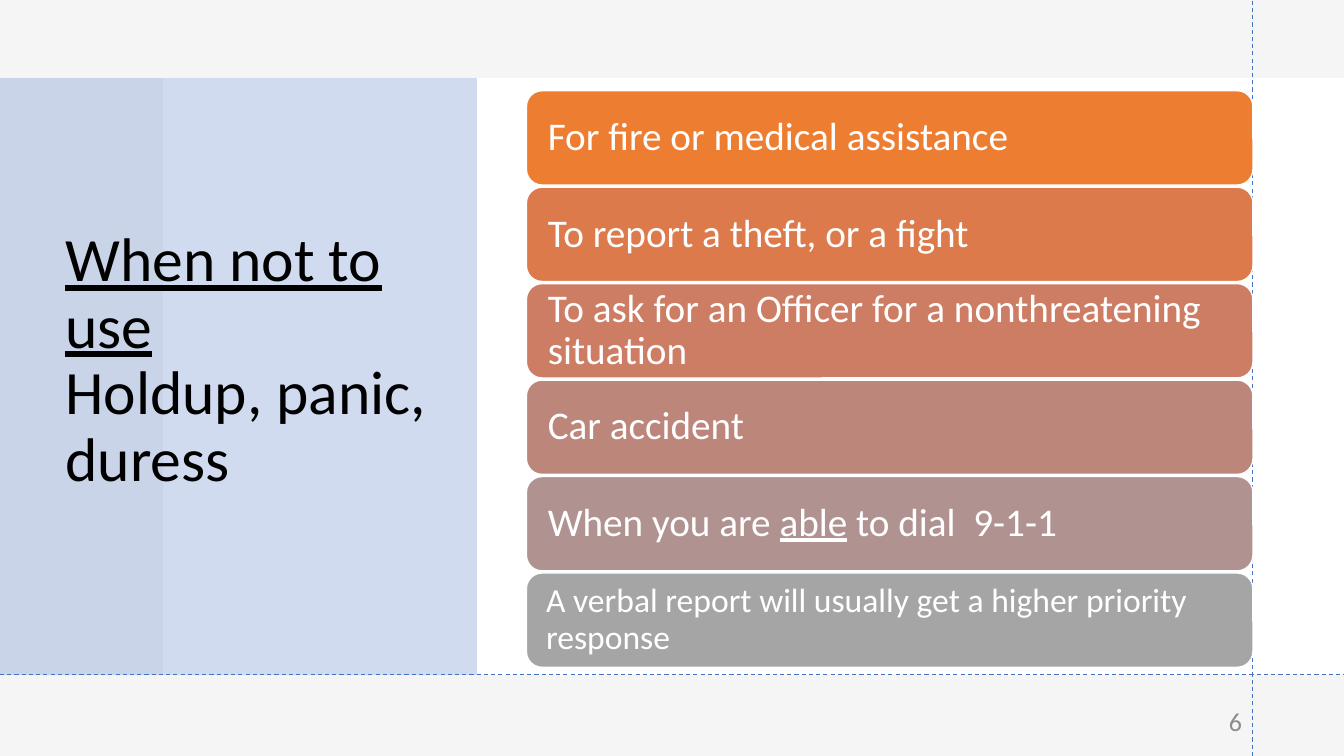
from lxml import etree
from pptx import Presentation
from pptx.dml.color import RGBColor
from pptx.enum.dml import MSO_LINE
from pptx.enum.shapes import MSO_CONNECTOR, MSO_SHAPE
from pptx.enum.text import MSO_ANCHOR, PP_ALIGN
from pptx.oxml.ns import qn
from pptx.util import Pt

WIDTH, HEIGHT = 960, 540
FONT = "Calibri"
WHITE, BLACK, BLUE, PALE, GREY = "FFFFFF", "000000", "4472C4", "F6F5F5", "8C8C8C"

TITLE = [("When not to use", True), ("Holdup, panic, duress", False)]
CARDS = [
    ("ED7D31", 28, 12, [("For fire or medical assistance", False)]),
    ("DC7A4B", 28, 12, [("To report a theft, or a fight", False)]),
    ("CC7D64", 28, 12, [("To ask for an Officer for a nonthreatening situation", False)]),
    ("BD867B", 28, 12, [("Car accident", False)]),
    ("B09391", 28, 12, [("When you are ", False), ("able", True), (" to dial  9-1-1", False)]),
    ("A5A5A5", 24, 10.8, [("A verbal report will usually get a higher priority response", False)]),
]
CARD_LEFT, CARD_TOP, CARD_WIDTH, CARD_HEIGHT, CARD_PITCH = 376, 64.8, 519, 67.4, 68.9
GUIDES = [(894.7, HEIGHT, 894.7, 0), (0, 481.7, WIDTH, 481.7)]


def colour(value):
    return RGBColor.from_string(value)


def add_block(kind, box, fill, opacity=None):
    shape = slide.shapes.add_shape(kind, *map(Pt, box))
    shape.shadow.inherit = False
    shape.fill.solid()
    shape.fill.fore_color.rgb = colour(fill)
    shape.line.fill.background()
    if opacity:
        solid = shape.fill.fore_color._xFill
        etree.SubElement(solid[0], qn("a:alpha"), val=str(opacity * 1000))
    return shape


def write(shape, runs, size, ink, align=PP_ALIGN.LEFT, spacing=0.9, breaks=False,
          side=7.2, edge=3.6):
    frame = shape.text_frame
    frame.word_wrap = True
    frame.vertical_anchor = MSO_ANCHOR.MIDDLE
    frame.margin_left = frame.margin_right = Pt(side)
    frame.margin_top = frame.margin_bottom = Pt(edge)
    paragraph = frame.paragraphs[0]
    paragraph.alignment = align
    paragraph.line_spacing = spacing
    for index, (text, underlined) in enumerate(runs):
        if breaks and index:
            paragraph.add_line_break()
        run = paragraph.add_run()
        run.text = text
        run.font.name = FONT
        run.font.size = Pt(size)
        run.font.color.rgb = colour(ink)
        if underlined:
            run.font.underline = True


presentation = Presentation()
presentation.slide_width, presentation.slide_height = Pt(WIDTH), Pt(HEIGHT)
slide = presentation.slides.add_slide(presentation.slide_layouts[6])
slide.background.fill.solid()
slide.background.fill.fore_color.rgb = colour(PALE)

add_block(MSO_SHAPE.RECTANGLE, (116.6, 55.8, WIDTH - 116.6, 426.2), WHITE)
add_block(MSO_SHAPE.RECTANGLE, (0, 55.8, 340.6, 426.2), BLUE, 25)

title = slide.shapes.add_textbox(*map(Pt, (39.6, 53.3, 284.4, 409.7)))
write(title, TITLE, 44, BLACK, breaks=True)

for guide in GUIDES:
    connector = slide.shapes.add_connector(MSO_CONNECTOR.STRAIGHT, *map(Pt, guide))
    connector.line.color.rgb = colour(BLUE)
    connector.line.width = Pt(0.75)
    connector.line.dash_style = MSO_LINE.DASH
    etree.SubElement(connector._element.spPr, qn("a:effectLst"))

for row, (fill, size, inset, runs) in enumerate(CARDS):
    box = (CARD_LEFT, CARD_TOP + row * CARD_PITCH, CARD_WIDTH, CARD_HEIGHT)
    card = add_block(MSO_SHAPE.ROUNDED_RECTANGLE, box, fill)
    card.line.color.rgb = colour(WHITE)
    card.line.width = Pt(1)
    write(card, runs, size, WHITE, side=inset, edge=0)

number = slide.shapes.add_textbox(*map(Pt, (678.2, 500.4, 216, 28.8)))
write(number, [("6", False)], 18.5, GREY, PP_ALIGN.RIGHT, 1)

presentation.save("out.pptx")
